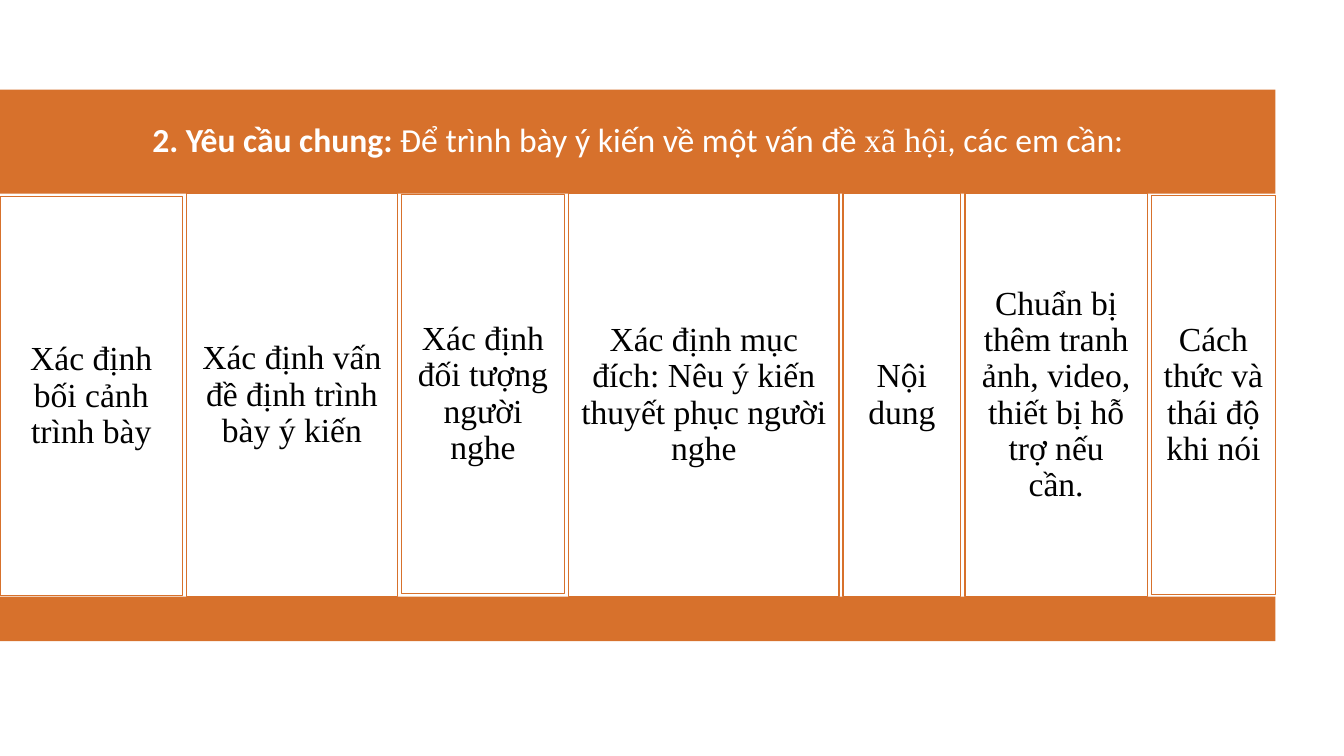
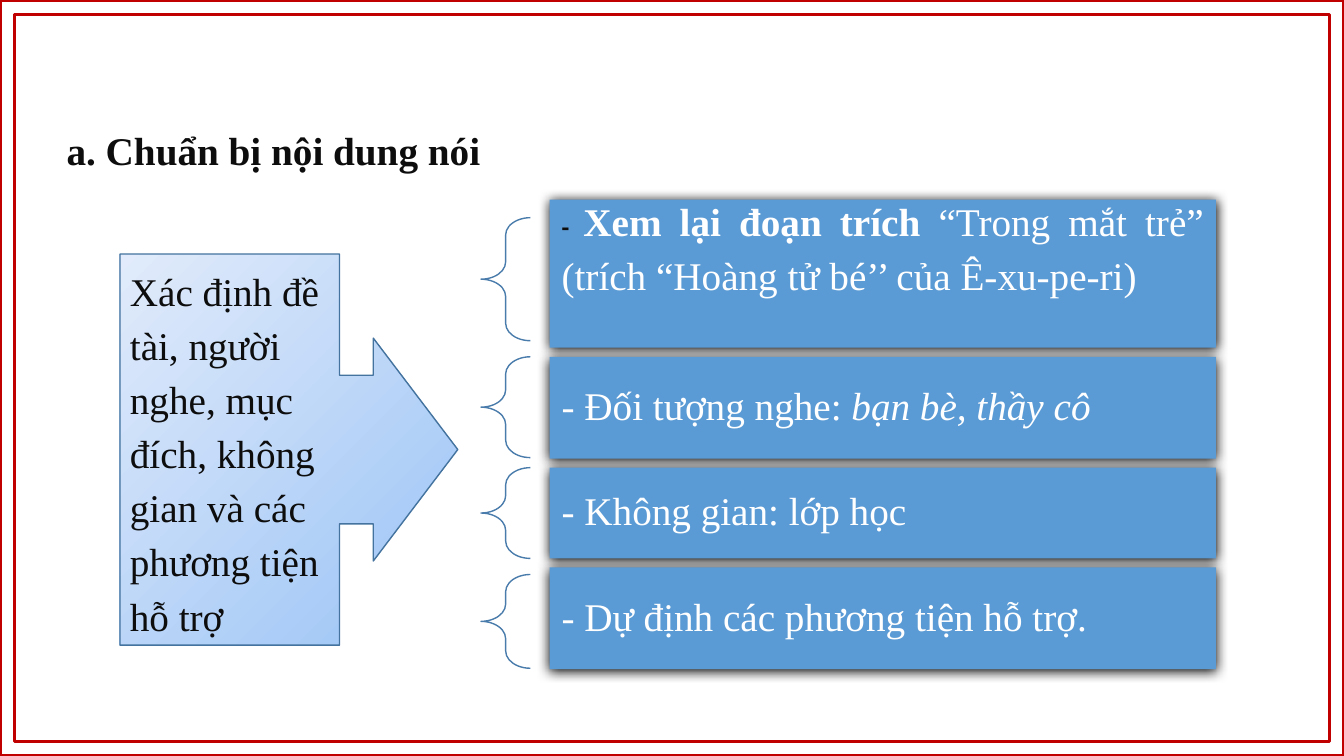
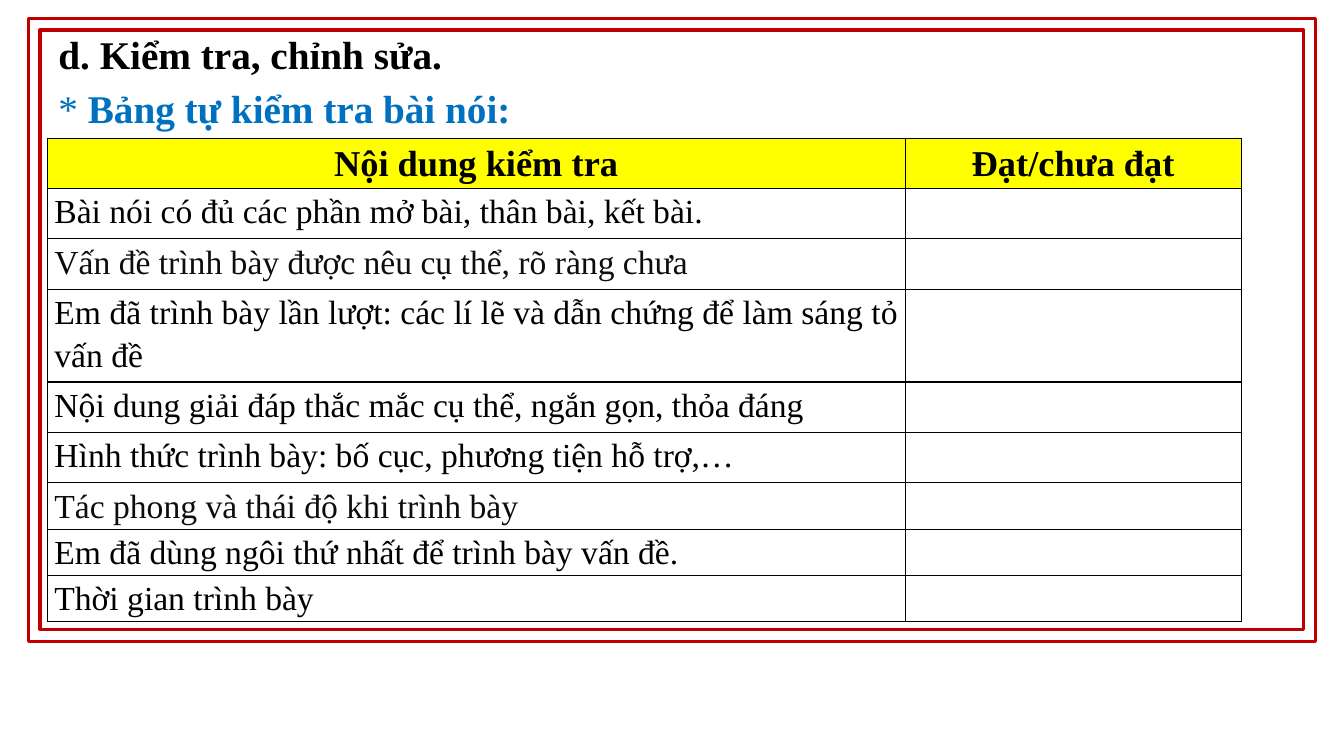
"""Builds three lesson slides on preparing and checking a spoken opinion."""
from dataclasses import dataclass

from lxml import etree
from pptx import Presentation
from pptx.dml.color import RGBColor
from pptx.enum.shapes import MSO_SHAPE
from pptx.enum.text import MSO_ANCHOR, MSO_AUTO_SIZE, PP_ALIGN
from pptx.oxml.ns import qn
from pptx.util import Inches, Pt

RECT, FRAME = MSO_SHAPE.RECTANGLE, MSO_SHAPE.FRAME
CALLOUT, BRACE = MSO_SHAPE.RIGHT_ARROW_CALLOUT, MSO_SHAPE.LEFT_BRACE
TOP, MIDDLE = MSO_ANCHOR.TOP, MSO_ANCHOR.MIDDLE
LEFT, CENTER, JUSTIFY = PP_ALIGN.LEFT, PP_ALIGN.CENTER, PP_ALIGN.JUSTIFY
NO_FIT = MSO_AUTO_SIZE.NONE


@dataclass(frozen=True)
class Theme:
    """Shared colours, fonts and type sizes."""
    serif: str = "Times New Roman"
    sans: str = "Calibri"
    orange: str = "D7712C"
    red: str = "C00000"
    blue: str = "5B9BD5"
    link: str = "0070C0"
    brace: str = "497CAB"
    edge: str = "43739E"
    pale: str = "E1EBFB"
    sky: str = "9AC3F5"
    yellow: str = "FFFF00"
    white: str = "FFFFFF"
    black: str = "000000"
    ink: str = "0D0D0D"
    large: int = 28
    header: int = 26
    medium: int = 24
    small: int = 18
    loose: float = 1.15
    tight: float = 0.9


T = Theme()
PLAIN_SERIF = {"bold": False, "font": T.serif}
PLAIN = {"bold": False}
BOLD = {"bold": True}

BAND_TITLE = [[("2. Yêu cầu chung: ", BOLD), "Để trình bày ý kiến về một vấn đề ",
               ("xã hội", PLAIN_SERIF), ", các em cần:"]]
BAND_WIDTH, BAND_TOP, BAND_HEIGHT, FOOT_HEIGHT = 12.65, 0.89, 1.03, 0.44
PILLAR_HEIGHT, PILLAR_GAP = 4, 0.04
PILLARS = [
    ("Xác định bối cảnh trình bày", 1.81, 0.03),
    ("Xác định vấn đề định trình bày ý kiến", 2.09, 0),
    ("Xác định đối tượng người nghe", 1.62, 0.01),
    ("Xác định mục đích: Nêu ý kiến thuyết phục người nghe", 2.68, 0),
    ("Nội dung", 1.17, 0),
    ("Chuẩn bị thêm tranh ảnh, video, thiết bị hỗ trợ nếu cần.", 1.81, 0),
    ("Cách thức và thái độ khi nói", 1.23, 0.02),
]

PREPARE_TITLE = [["a. Chuẩn bị nội dung nói"]]
PREPARE = "Xác định đề tài, người nghe, mục đích, không gian và các phương tiện hỗ trợ"
CARD_TOP, CARD_GAP = 1.98, 0.09
CARDS = [
    ([("- ", {"bold": True, "font": T.sans, "size": T.small, "color": T.ink}),
      ("Xem lại đoạn trích ", BOLD),
      "“Trong mắt trẻ” (trích “Hoàng tử bé’’ của Ê-xu-pe-ri)"], 1.47, 0.18, 1.22),
    (["- Đối tượng nghe: ", ("bạn bè, thầy cô", {"italic": True})], 1.01, 0, 1),
    (["- Không gian: lớp học"], 0.9, 0, 0.9),
    (["- Dự định các phương tiện hỗ trợ."], 1.01, 0.07, 0.93),
]

CHECK_TITLE = [["d. Kiểm tra, chỉnh sửa."],
               [("* ", {"bold": False, "color": T.link}),
                ("Bảng tự kiểm tra bài nói:", {"color": T.link})]]
CHECK_HEADS = ["Nội dung kiểm tra", "Đạt/chưa đạt"]
CHECK_WIDTHS = [8.51, 3.33]
CHECK_ROWS = [
    ("Bài nói có đủ các phần mở bài, thân bài, kết bài.", 0.5, T.black),
    ("Vấn đề trình bày được nêu cụ thể, rõ ràng chưa", 0.5, T.ink),
    ("Em đã trình bày lần lượt: các lí lẽ và dẫn chứng để làm sáng tỏ vấn đề",
     0.92, T.black),
    ("Nội dung giải đáp thắc mắc cụ thể, ngắn gọn, thỏa đáng", 0.5, T.black),
    ("Hình thức trình bày: bố cục, phương tiện hỗ trợ,…", 0.5, T.black),
    ("Tác phong và thái độ khi trình bày", 0.46, T.ink),
    ("Em đã dùng ngôi thứ nhất để trình bày vấn đề.", 0.46, T.black),
    ("Thời gian trình bày", 0.46, T.black),
]


def rgb(color):
    """Turn a hex string into a colour."""
    return RGBColor.from_string(color)


def write(tf, paragraphs, size, color, align=LEFT, spacing=T.loose, font=T.serif, bold=False):
    """Write paragraphs made of plain or styled runs."""
    for i, runs in enumerate(paragraphs):
        p = tf.paragraphs[0] if i == 0 else tf.add_paragraph()
        p.alignment, p.line_spacing = align, spacing
        for run in runs:
            text, own = (run, {}) if isinstance(run, str) else run
            r = p.add_run()
            r.text = text
            r.font.name = own.get("font", font)
            r.font.size = Pt(own.get("size", size))
            r.font.bold = own.get("bold", bold)
            r.font.italic = own.get("italic", False)
            r.font.color.rgb = rgb(own.get("color", color))


def frame_text(tf, anchor=MIDDLE, insets=(0.12, 0.12, 0.12, 0.12)):
    """Set wrapping, anchor and insets of a text frame."""
    tf.word_wrap, tf.auto_size, tf.vertical_anchor = True, NO_FIT, anchor
    (tf.margin_left, tf.margin_top,
     tf.margin_right, tf.margin_bottom) = map(Inches, insets)
    return tf


def shape(s, kind, box, fill=None, line=None, width=1, adjust=()):
    """Add a preset shape without the default look."""
    sp = s.shapes.add_shape(kind, *map(Inches, box))
    sp.shadow.inherit = False
    for i, value in enumerate(adjust):
        sp.adjustments[i] = value
    if fill:
        sp.fill.solid()
        sp.fill.fore_color.rgb = rgb(fill)
    else:
        sp.fill.background()
    if line:
        sp.line.color.rgb = rgb(line)
        sp.line.width = Pt(width)
    else:
        sp.line.fill.background()
    return sp


def title(s, box):
    """Move the title placeholder and return it."""
    sp = s.shapes.title
    sp.left, sp.top, sp.width, sp.height = map(Inches, box)
    return sp


def heading(s, box, paragraphs, color):
    """Write a bold heading in the title placeholder."""
    tf = frame_text(title(s, box).text_frame, TOP, (0.1, 0.05, 0.1, 0.05))
    write(tf, paragraphs, T.large, color, bold=True)


def red_frame(s, box):
    """Draw the red double frame."""
    shape(s, FRAME, box, line=T.red, width=2.25, adjust=[0.019])


def drop_shadow(sp):
    """Give a card its soft black shadow."""
    effects = sp._element.spPr.find(qn("a:effectLst"))
    shadow = etree.SubElement(effects, qn("a:outerShdw"), blurRad=str(Pt(8.5)),
                              dist=str(Pt(1)), dir="5400000", rotWithShape="0")
    etree.SubElement(shadow, qn("a:srgbClr"), val=T.black)


def cell_borders(cell):
    """Draw thin black lines on all four sides of a cell."""
    tcPr = cell._tc.get_or_add_tcPr()
    for i, side in enumerate(("lnL", "lnR", "lnT", "lnB")):
        ln = etree.Element(qn(f"a:{side}"), w=str(Pt(1)))
        fill = etree.SubElement(ln, qn("a:solidFill"))
        etree.SubElement(fill, qn("a:srgbClr"), val=T.black)
        tcPr.insert(i, ln)


def requirements_slide(s):
    """Band title above seven pillars."""
    band = title(s, (0, BAND_TOP, BAND_WIDTH, BAND_HEIGHT))
    band.fill.solid()
    band.fill.fore_color.rgb = rgb(T.orange)
    write(frame_text(band.text_frame), BAND_TITLE, T.medium, T.white,
          CENTER, T.tight, T.sans)
    top = BAND_TOP + BAND_HEIGHT
    shape(s, RECT, (0, top + PILLAR_HEIGHT, BAND_WIDTH, FOOT_HEIGHT), T.orange)
    left = 0
    for text, width, drop in PILLARS:
        height = PILLAR_HEIGHT - (PILLAR_GAP if drop else 0)
        sp = shape(s, RECT, (left, top + drop, width, height), T.white, T.orange)
        write(frame_text(sp.text_frame), [[text]], T.medium, T.black, CENTER, T.tight)
        left += width + PILLAR_GAP


def preparation_slide(s):
    """Arrow callout that leads to four braced cards."""
    red_frame(s, (0, 0, 13.33, 7.5))
    heading(s, (0.56, 1.13, 6.67, 0.64), PREPARE_TITLE, T.ink)
    arrow = shape(s, CALLOUT, (1.19, 2.52, 3.35, 3.88), T.pale, T.edge,
                  adjust=[0.44, 0.33, 0.25, 0.65])
    arrow.fill.gradient()
    arrow.fill.gradient_angle = 135
    for stop, color in zip(arrow.fill.gradient_stops, (T.sky, T.pale)):
        stop.color.rgb = rgb(color)
    write(frame_text(arrow.text_frame, MIDDLE, (0.1, 0.05, 0.1, 0.05)),
          [[PREPARE]], T.large, T.ink)
    top = CARD_TOP
    for i, (runs, height, drop, brace_height) in enumerate(CARDS):
        first = i == 0
        shape(s, BRACE, (4.77, top + drop, 0.49, brace_height), line=T.brace,
              adjust=[0.35, 0.5])
        card = shape(s, RECT, (5.45, top, 6.61, height), T.blue)
        drop_shadow(card)
        insets = (0.12, 0, 0.12, 0.59) if first else (0.12, 0.12, 0.12, 0.12)
        write(frame_text(card.text_frame, MIDDLE, insets), [runs], T.large, T.white,
              JUSTIFY if first else LEFT, T.loose if first else T.tight)
        top += height + CARD_GAP


def checklist_slide(s):
    """Self-check table with an empty result column."""
    red_frame(s, (0.28, 0.18, 12.77, 6.18))
    heading(s, (0.48, 0.18, 6.67, 1.18), CHECK_TITLE, T.black)
    heights = [0.5] + [height for _, height, _ in CHECK_ROWS]
    box = (0.47, 1.37, sum(CHECK_WIDTHS), sum(heights))
    table = s.shapes.add_table(len(heights), len(CHECK_WIDTHS), *map(Inches, box)).table
    table.first_row = table.horz_banding = False
    for column, width in zip(table.columns, CHECK_WIDTHS):
        column.width = Inches(width)
    for row, height in zip(table.rows, heights):
        row.height = Inches(height)
    for cell in table.iter_cells():
        cell.margin_left = cell.margin_right = Inches(0.07)
        cell.margin_top = cell.margin_bottom = 0
        cell.fill.background()
        cell_borders(cell)
    for cell, text in zip(table.rows[0].cells, CHECK_HEADS):
        cell.fill.solid()
        cell.fill.fore_color.rgb = rgb(T.yellow)
        write(cell.text_frame, [[text]], T.header, T.black, CENTER, bold=True)
    for i, (text, _, color) in enumerate(CHECK_ROWS, 1):
        write(table.cell(i, 0).text_frame, [[text]], T.medium, color, JUSTIFY)


def main():
    """Build and save the presentation."""
    prs = Presentation()
    prs.slide_width, prs.slide_height = Inches(13.33), Inches(7.5)
    title_only = prs.slide_layouts[5]
    for build in (requirements_slide, preparation_slide, checklist_slide):
        build(prs.slides.add_slide(title_only))
    prs.save("out.pptx")


if __name__ == "__main__":
    main()
